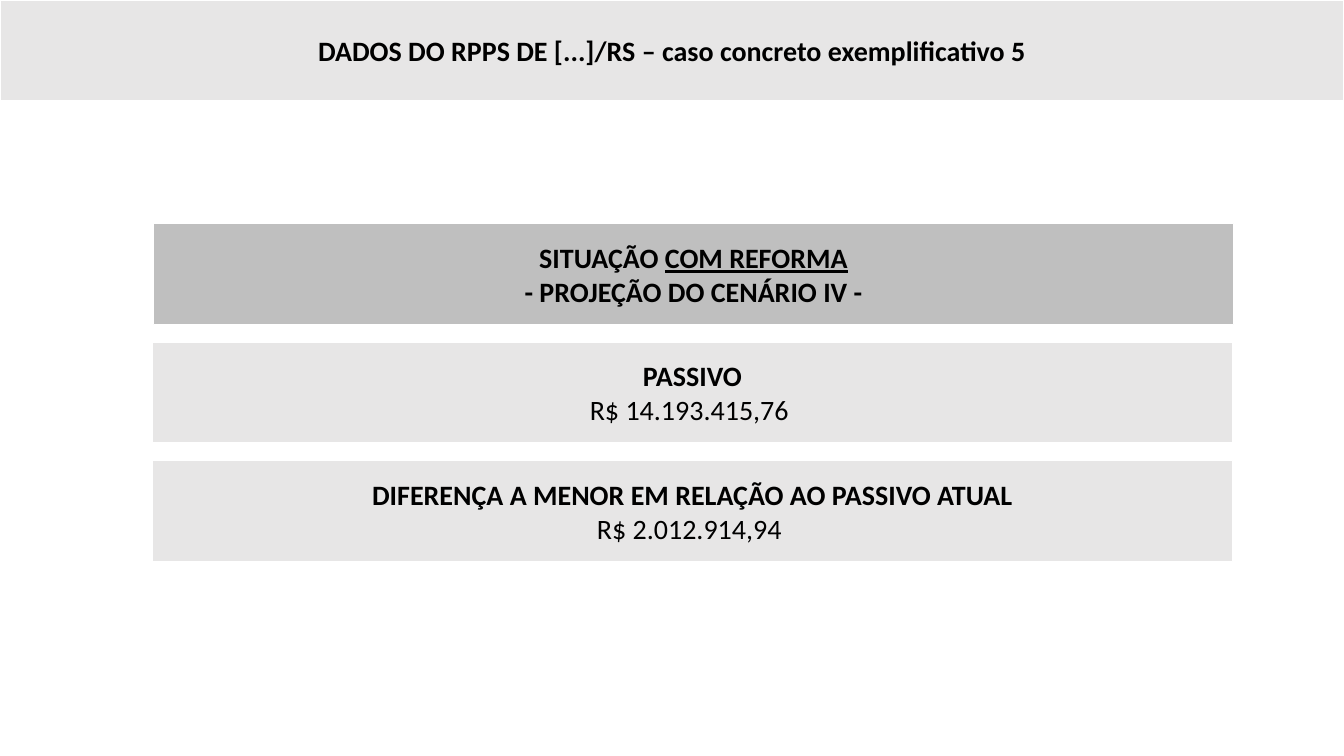
from pptx import Presentation
from pptx.dml.color import RGBColor
from pptx.enum.shapes import MSO_SHAPE
from pptx.enum.text import MSO_ANCHOR, MSO_AUTO_SIZE, PP_ALIGN
from pptx.util import Pt

BLACK = RGBColor(0x00, 0x00, 0x00)
WHITE = RGBColor(0xFF, 0xFF, 0xFF)
LIGHT = RGBColor(0xE7, 0xE6, 0xE6)
GRAY = RGBColor(0xBF, 0xBF, 0xBF)

WIDE, HIGH = 960, 540
BAND = 72
LEFT, TOP = 108.72, 159.84
WIDTH, STEP = 771.84, 84.6


class Deck:
    font = "Calibri"
    size = 20

    def __init__(self):
        self.prs = Presentation()
        self.prs.slide_width = Pt(WIDE)
        self.prs.slide_height = Pt(HIGH)
        self.slide = self.prs.slides.add_slide(self.prs.slide_layouts[5])

    def paint(self, shape, fill):
        shape.fill.solid()
        shape.fill.fore_color.rgb = fill
        shape.line.color.rgb = WHITE
        shape.line.width = Pt(1)

    def label(self, shape, lines):
        frame = shape.text_frame
        frame.word_wrap = True
        frame.auto_size = MSO_AUTO_SIZE.NONE
        frame.vertical_anchor = MSO_ANCHOR.MIDDLE
        for i, line in enumerate(lines):
            para = frame.add_paragraph() if i else frame.paragraphs[0]
            para.alignment = PP_ALIGN.CENTER
            for text, bold, under in line:
                run = para.add_run()
                run.text = text
                run.font.name = self.font
                run.font.size = Pt(self.size)
                run.font.bold = bold
                run.font.underline = under
                run.font.color.rgb = BLACK

    def title(self, text):
        shape = self.slide.shapes.title
        shape.left, shape.top = Pt(0), Pt(0)
        shape.width, shape.height = Pt(WIDE), Pt(BAND)
        self.paint(shape, LIGHT)
        self.label(shape, [[(text, True, False)]])

    def box(self, left, top, fill, lines):
        shape = self.slide.shapes.add_shape(
            MSO_SHAPE.RECTANGLE, Pt(left), Pt(top), Pt(WIDTH), Pt(BAND))
        shape.shadow.inherit = False
        self.paint(shape, fill)
        self.label(shape, lines)

    def save(self):
        self.prs.save("out.pptx")


def main():
    deck = Deck()
    deck.title("DADOS DO RPPS DE [...]/RS – caso concreto exemplificativo 5")
    deck.box(LEFT + 0.72, TOP, GRAY, [
        [("SITUAÇÃO ", True, False), ("COM REFORMA", True, True)],
        [("- PROJEÇÃO DO CENÁRIO IV -", True, False)],
    ])
    values = [
        ("PASSIVO", "R$ 14.193.415,76 "),
        ("DIFERENÇA A MENOR EM RELAÇÃO AO PASSIVO ATUAL", "R$ 2.012.914,94 "),
    ]
    for row, (name, value) in enumerate(values, 1):
        deck.box(LEFT, TOP + row * STEP, LIGHT,
                 [[(name, True, False)], [(value, False, False)]])
    deck.save()


if __name__ == "__main__":
    main()
